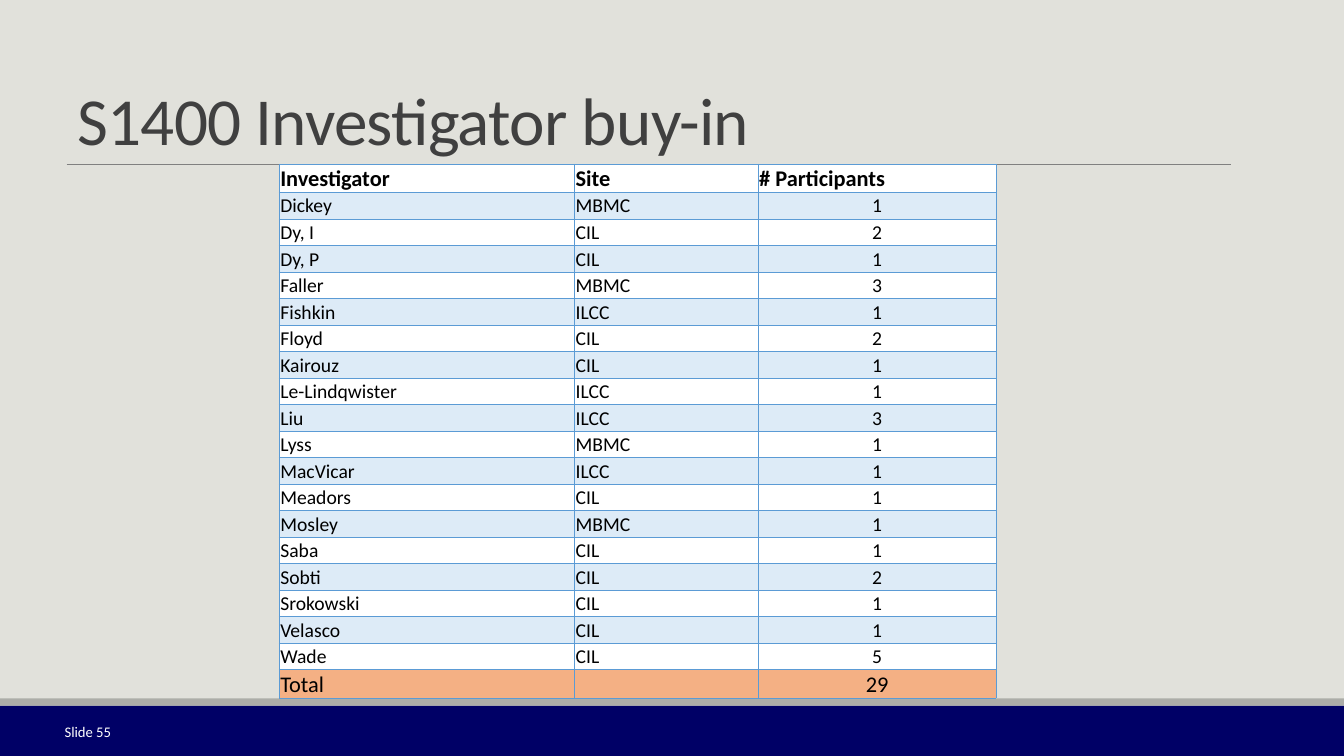
from lxml import etree
from pptx import Presentation
from pptx import util as u
from pptx.dml.color import RGBColor
from pptx.enum import shapes, text
from pptx.oxml import parse_xml
from pptx.oxml.ns import qn

FONT = "Calibri"
DRAWING_NS = "http://schemas.openxmlformats.org/drawingml/2006/main"
BORDER = "5B9BD5"
WHITE, BAND, TOTAL_FILL = "FFFFFF", "DDEBF7", "F4B084"

HEADINGS = ("Investigator", "Site", "# Participants")
INVESTIGATORS = [
    ("Dickey", "MBMC", 1), ("Dy, I", "CIL", 2), ("Dy, P", "CIL", 1),
    ("Faller", "MBMC", 3), ("Fishkin", "ILCC", 1), ("Floyd", "CIL", 2),
    ("Kairouz", "CIL", 1), ("Le-Lindqwister", "ILCC", 1), ("Liu", "ILCC", 3),
    ("Lyss", "MBMC", 1), ("MacVicar", "ILCC", 1), ("Meadors", "CIL", 1),
    ("Mosley", "MBMC", 1), ("Saba", "CIL", 1), ("Sobti", "CIL", 2),
    ("Srokowski", "CIL", 1), ("Velasco", "CIL", 1), ("Wade", "CIL", 5),
]
COLUMN_WIDTHS = (2.93, 1.82, 2.36)
TABLE_HEIGHT, END_ROW_HEIGHT = 5.3, 0.28


def color(value):
    return RGBColor.from_string(value)


def paint(fill, value):
    fill.solid()
    fill.fore_color.rgb = color(value)


def add_span(para, words, size, value, bold=False):
    span = para.add_run()
    span.text = words
    span.font.name = FONT
    span.font.size = u.Pt(size)
    span.font.bold = bold
    span.font.color.rgb = color(value)
    return span


def add_bar(page, top, height, value):
    bar = page.shapes.add_shape(
        shapes.MSO_SHAPE.RECTANGLE, 0, u.Inches(top), u.Inches(13.33), u.Inches(height))
    bar.shadow.inherit = False
    paint(bar.fill, value)
    bar.line.fill.background()


def add_rule(page, left, right, top):
    rule = page.shapes.add_connector(
        shapes.MSO_CONNECTOR.STRAIGHT,
        u.Inches(left), u.Inches(top), u.Inches(right), u.Inches(top))
    rule.line.color.rgb = color("808080")
    rule.line.width = u.Pt(0.5)
    etree.SubElement(rule._element.spPr, qn("a:effectLst"))


def add_text(page, place, words, size, value, anchor, align):
    box = page.shapes.add_textbox(*map(u.Inches, place))
    frame = box.text_frame
    frame.word_wrap = True
    frame.vertical_anchor = anchor
    para = frame.paragraphs[0]
    para.alignment = align
    return para, add_span(para, words, size, value)


def add_borders(cell):
    properties = cell._tc.get_or_add_tcPr()
    for index, side in enumerate(("lnL", "lnR", "lnT", "lnB")):
        properties.insert(index, parse_xml(
            f'<a:{side} xmlns:a="{DRAWING_NS}" w="{u.Pt(0.5)}"><a:solidFill>'
            f'<a:srgbClr val="{BORDER}"/></a:solidFill></a:{side}>'))


def fill_cell(cell, words, size, bold, fill, centred):
    cell.margin_left = cell.margin_right = cell.margin_top = u.Inches(0.01)
    cell.margin_bottom = 0
    cell.vertical_anchor = text.MSO_ANCHOR.MIDDLE
    paint(cell.fill, fill)
    add_borders(cell)
    para = cell.text_frame.paragraphs[0]
    para.alignment = text.PP_ALIGN.CENTER if centred else text.PP_ALIGN.LEFT
    if words:
        add_span(para, words, size, "000000", bold)
    else:
        # An empty cell keeps the row's text size
        etree.SubElement(para._p, qn("a:endParaRPr"), sz=str(size * 100))


def add_participants(page):
    total = sum(count for _, _, count in INVESTIGATORS)
    rows = [HEADINGS, *INVESTIGATORS, ("Total", "", total)]
    last = len(rows) - 1
    body_height = (TABLE_HEIGHT - 2 * END_ROW_HEIGHT) / len(INVESTIGATORS)
    table = page.shapes.add_table(
        len(rows), len(HEADINGS), u.Inches(2.77), u.Inches(1.63),
        u.Inches(sum(COLUMN_WIDTHS)), u.Inches(TABLE_HEIGHT)).table
    for column, width in zip(table.columns, COLUMN_WIDTHS):
        column.width = u.Inches(width)
    for i, row in enumerate(rows):
        is_end = i in (0, last)
        table.rows[i].height = u.Inches(END_ROW_HEIGHT if is_end else body_height)
        fill = TOTAL_FILL if i == last else BAND if i % 2 else WHITE
        for j, value in enumerate(row):
            fill_cell(table.cell(i, j), str(value), 16 if is_end else 14,
                      i == 0, fill, centred=i > 0 and j == 2)


def main():
    deck = Presentation()
    deck.slide_width, deck.slide_height = u.Inches(13.33), u.Inches(7.5)
    page = deck.slides.add_slide(deck.slide_layouts[6])
    paint(page.background.fill, "E1E1DB")

    # Footer bars and title rule
    add_bar(page, 7, 0.5, "000066")
    add_bar(page, 6.93, 0.07, "ACADA8")
    add_rule(page, 0.66, 12.21, 1.63)

    # Title and slide number
    para, span = add_text(page, (0.67, 0.04, 11.53, 1.59), "S1400 Investigator buy-in",
                          48, "404040", text.MSO_ANCHOR.BOTTOM, text.PP_ALIGN.LEFT)
    para.line_spacing = 0.85
    span.font._element.set("spc", "-50")
    add_text(page, (0.11, 7.06, 1.09, 0.4), "Slide 55",
             10.5, WHITE, text.MSO_ANCHOR.MIDDLE, text.PP_ALIGN.RIGHT)

    # Participants by investigator
    add_participants(page)
    deck.save("out.pptx")


if __name__ == "__main__":
    main()
